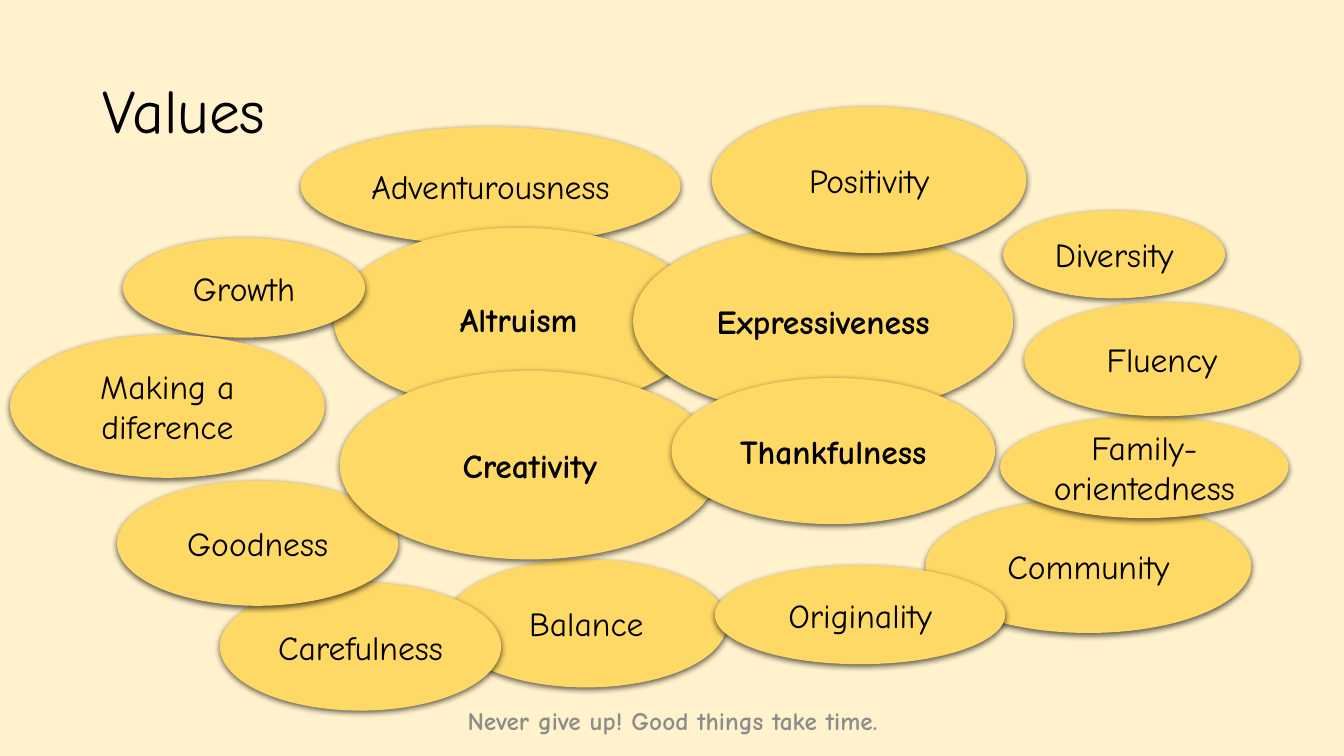
"""Build a slide of personal values shown as overlapping ellipses."""
import lxml.etree
import pptx
import pptx.dml.color
import pptx.enum.shapes
import pptx.enum.text
import pptx.oxml.ns
import pptx.util
from pptx.util import Inches

CREAM = pptx.dml.color.RGBColor(0xFF, 0xF2, 0xCC)
GOLD = pptx.dml.color.RGBColor(0xFF, 0xD9, 0x66)
BLACK = pptx.dml.color.RGBColor(0x00, 0x00, 0x00)
GREY = pptx.dml.color.RGBColor(0x8C, 0x8C, 0x8C)
FONT = "Comic Neue"

VALUES = [
    ("Adventurousness", 2.98, 1.26, 3.77, 1.17),
    ("Community", 9.18, 4.95, 3.23, 1.33),
    ("Altruism", 3.31, 2.26, 3.67, 1.82),
    ("Balance", 4.42, 5.55, 2.79, 1.27),
    ("Carefulness", 2.18, 5.78, 2.79, 1.27),
    ("Expressiveness", 6.28, 2.25, 3.77, 1.87),
    ("Goodness", 1.16, 4.77, 2.79, 1.24),
    ("Creativity", 3.37, 3.68, 3.77, 1.87),
    ("Positivity", 7.06, 1.06, 3.12, 1.45),
    ("Diversity", 9.95, 2.09, 2.2, 0.87),
    ("Growth", 1.22, 2.36, 2.4, 0.99),
    ("Family-orientedness", 9.92, 4.13, 2.86, 1.01),
    ("Fluency", 10.16, 3, 2.73, 1.13),
    ("Originality", 7.09, 5.61, 2.88, 0.98),
    ("Thankfulness", 6.66, 3.75, 3.21, 1.45),
    ("Making a diference", 0.1, 3.32, 3.12, 1.42),
]
CORE_VALUES = {"Altruism", "Expressiveness", "Creativity", "Thankfulness"}


def write_text(shape, text, size, color=BLACK, bold=False, align="CENTER"):
    frame = shape.text_frame
    frame.text = text
    frame.word_wrap = True
    frame.vertical_anchor = pptx.enum.text.MSO_ANCHOR.MIDDLE
    paragraph = frame.paragraphs[0]
    paragraph.alignment = pptx.enum.text.PP_ALIGN[align]
    paragraph.font.name = FONT
    paragraph.font.size = pptx.util.Pt(size)
    paragraph.font.bold = bold
    paragraph.font.color.rgb = color
    return paragraph


def add_soft_shadow(shape):
    qn = pptx.oxml.ns.qn
    shape.shadow.inherit = False
    effects = shape.element.spPr.find(qn("a:effectLst"))
    shadow = lxml.etree.SubElement(
        effects, qn("a:outerShdw"), blurRad=str(pptx.util.Pt(4.5)),
        dist=str(pptx.util.Pt(1.5)), dir="5400000", algn="ctr", rotWithShape="0")
    black = lxml.etree.SubElement(shadow, qn("a:srgbClr"), val=str(BLACK))
    lxml.etree.SubElement(black, qn("a:alpha"), val="63000")


def add_title(slide, text):
    title = slide.shapes.title
    title.left, title.top = Inches(0.92), Inches(0.4)
    title.width, title.height = Inches(11.5), Inches(1.45)
    write_text(title, text, 44, align="LEFT").line_spacing = 0.9


def add_motto(slide, text):
    motto = slide.shapes.add_textbox(Inches(4.42), Inches(6.95), Inches(4.5), Inches(0.4))
    write_text(motto, text, 18, GREY, bold=True)


def add_value(slide, name, *box):
    ellipse = slide.shapes.add_shape(
        pptx.enum.shapes.MSO_SHAPE.OVAL, *(Inches(length) for length in box))
    ellipse.fill.solid()
    ellipse.fill.fore_color.rgb = GOLD
    ellipse.line.fill.background()
    add_soft_shadow(ellipse)
    write_text(ellipse, name, 24, bold=name in CORE_VALUES)


def main():
    deck = pptx.Presentation()
    deck.slide_width, deck.slide_height = Inches(13.33), Inches(7.5)
    slide = deck.slides.add_slide(deck.slide_layouts.get_by_name("Title Only"))
    slide.background.fill.solid()
    slide.background.fill.fore_color.rgb = CREAM
    add_title(slide, "Values")
    add_motto(slide, "Never give up! Good things take time.")
    for value in VALUES:
        add_value(slide, *value)
    deck.save("out.pptx")


if __name__ == "__main__":
    main()
